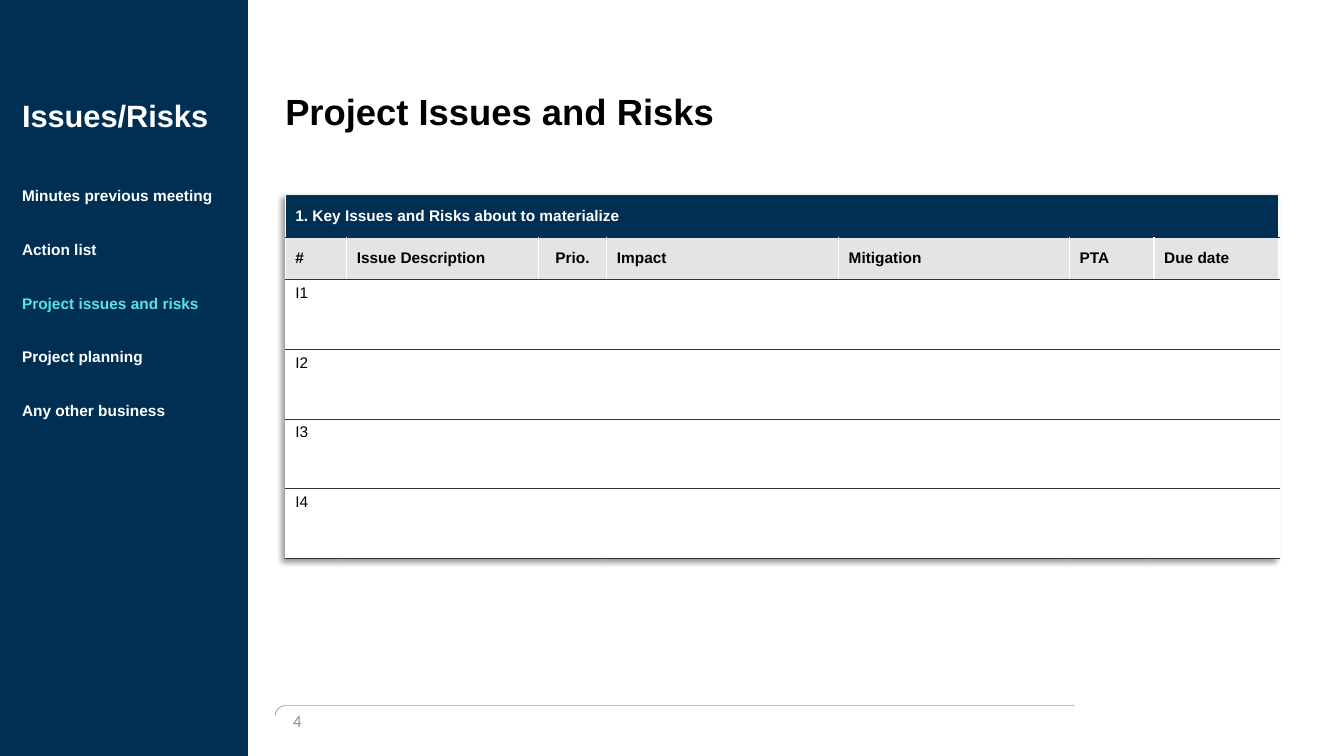
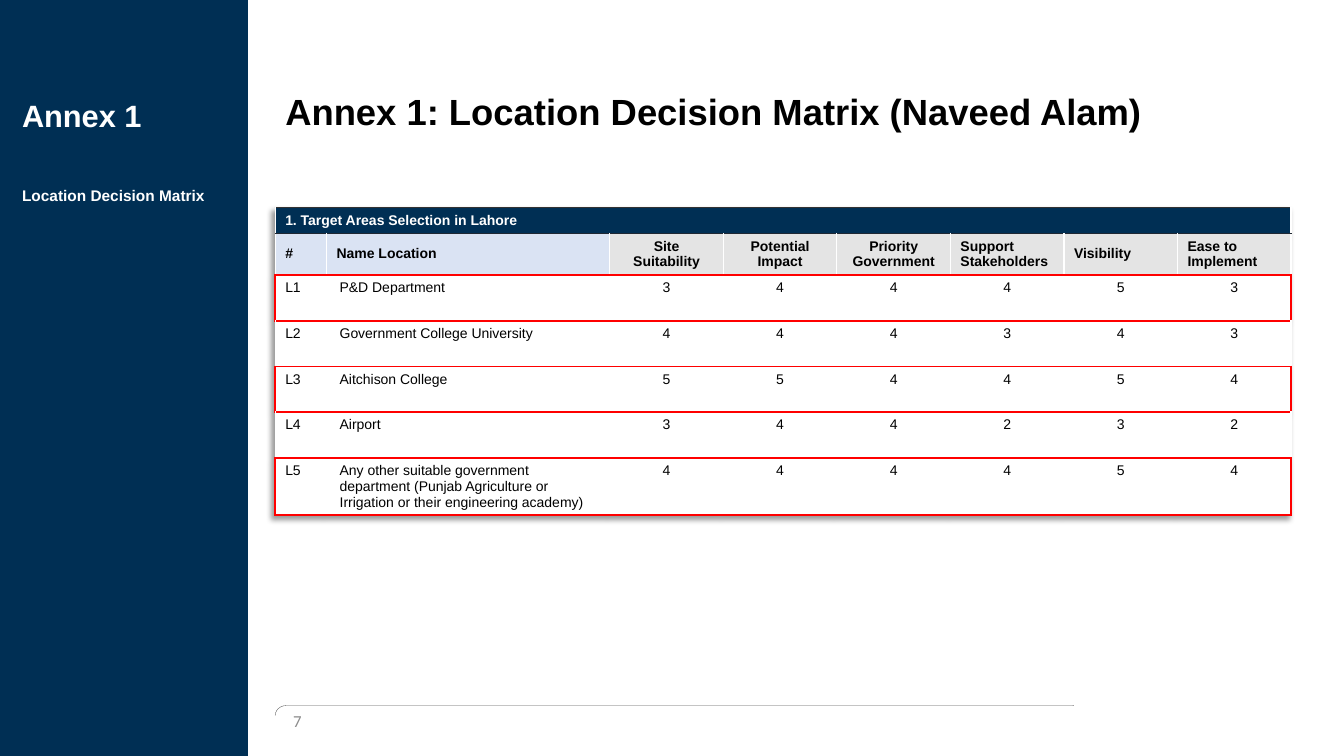
from dataclasses import dataclass
from typing import NamedTuple

import lxml.etree
import pptx
import pptx.dml.color
import pptx.enum.shapes
import pptx.enum.text
import pptx.oxml.ns
import pptx.util

ALIGN = pptx.enum.text.PP_ALIGN
ANCHOR = pptx.enum.text.MSO_ANCHOR
SHAPE = pptx.enum.shapes.MSO_SHAPE
qn = pptx.oxml.ns.qn


@dataclass(frozen=True)
class Theme:
    navy: str = "002F54"
    white: str = "FFFFFF"
    black: str = "000000"
    accent: str = "5BE0EF"
    number: str = "8C8C8C"
    footer_line: str = "595959"
    header: str = "E4E4E4"
    header_blue: str = "DAE3F3"
    dark_rule: str = "1F2833"
    rule: str = "333333"
    highlight: str = "FF0000"
    font: str = "Arial"
    number_font: str = "Calibri"
    title_size: float = 26
    section_size: float = 22
    agenda_size: float = 11
    agenda_pitch: float = 19.2
    number_size: float = 12


class Box(NamedTuple):
    """Place and size in cells of the 160 x 90 slide grid."""
    col: float
    row: float
    cols: float
    rows: float


class Rule(NamedTuple):
    color: str
    width: float


class Column(NamedTuple):
    heading: str
    cols: float
    heading_align: ALIGN = ALIGN.LEFT
    body_align: ALIGN = ALIGN.LEFT
    heading_fill: str = Theme.header
    body_inset: float = 0.1


@dataclass(frozen=True)
class Matrix:
    caption: str
    col: float
    row: float
    columns: list[Column]
    row_heights: list[float]
    body: list[list[str]]
    body_rule: Rule
    size: float
    highlighted: tuple[int, ...] = ()


@dataclass(frozen=True)
class Page:
    number: str
    title: str
    section: str
    agenda: list[str]
    matrix: Matrix
    current: str = ""


T = Theme()
CELL = pptx.util.Inches(1) / 12
SIDEBAR = Box(0, 0, 29.52, 90)
TITLE = Box(32.76, 4.8, 116.28, 17.4)
SECTION = Box(1.44, 11.4, 27, 5.88)
AGENDA = Box(1.44, 20.6, 27, 65.56)
NUMBER = Box(33.72, 83.4, 18.36, 4.8)
FOOTER_BRACKET = Box(80.28, 36.48, 1.2, 96.24)
FOOTER_MASK = Box(127.92, 83.16, 1.32, 2.4)
WHITE_RULE = Rule(T.white, 1)
DARK_RULE = Rule(T.dark_rule, 1)
THIN_RULE = Rule(T.rule, 0.5)
RED_RULE = Rule(T.highlight, 1.5)


def grid(cells: float) -> pptx.util.Emu:
    return pptx.util.Emu(round(cells * CELL))


def rgb(color: str) -> pptx.dml.color.RGBColor:
    return pptx.dml.color.RGBColor.from_string(color)


def add_run(p, text: str, size: float, color: str, bold: bool = True,
            font: str = T.font) -> None:
    r = p.add_run()
    r.text = text
    r.font.name = font
    r.font.size = pptx.util.Pt(size)
    r.font.bold = bold
    r.font.color.rgb = rgb(color)


def set_frame(tf, anchor: ANCHOR) -> None:
    tf.word_wrap = True
    tf.auto_size = pptx.enum.text.MSO_AUTO_SIZE.NONE
    tf.vertical_anchor = anchor
    tf.margin_left = tf.margin_right = pptx.util.Inches(0.1)
    tf.margin_top = tf.margin_bottom = pptx.util.Inches(0.05)


def add_text_frame(slide, box: Box, anchor: ANCHOR = ANCHOR.TOP):
    tf = slide.shapes.add_textbox(*map(grid, box)).text_frame
    set_frame(tf, anchor)
    return tf


def add_outline(slide, kind: SHAPE, box: Box, fill: str = "", line: Rule | None = None):
    sp = slide.shapes.add_shape(kind, *map(grid, box))
    sp.shadow.inherit = False
    if fill:
        sp.fill.solid()
        sp.fill.fore_color.rgb = rgb(fill)
    else:
        sp.fill.background()
    if line:
        sp.line.color.rgb = rgb(line.color)
        sp.line.width = pptx.util.Pt(line.width)
    else:
        sp.line.fill.background()
    return sp


def dress_layout(layout, slide) -> None:
    """Draw the sidebar and footer on a slide, then move them to its layout."""
    for ph in list(layout.placeholders):
        if ph.placeholder_format.idx:
            ph.element.getparent().remove(ph.element)
    bracket = add_outline(slide, SHAPE.LEFT_BRACKET, FOOTER_BRACKET,
                          line=Rule(T.footer_line, 0.25))
    bracket.rotation = 90
    bracket.adjustments[0] = 1.079
    sidebar = add_outline(slide, SHAPE.RECTANGLE, SIDEBAR, T.navy)
    mask = add_outline(slide, SHAPE.RECTANGLE, FOOTER_MASK, T.white, WHITE_RULE)
    for sp in (bracket, sidebar, mask):
        layout.shapes.element.append(sp.element)


def set_borders(cell, left: Rule, right: Rule, top: Rule, bottom: Rule) -> None:
    tc_pr = cell._tc.get_or_add_tcPr()
    for side, rule in zip("LRTB", (left, right, top, bottom)):
        ln = lxml.etree.SubElement(tc_pr, qn(f"a:ln{side}"),
                                   w=str(pptx.util.Pt(rule.width)))
        fill = lxml.etree.SubElement(ln, qn("a:solidFill"))
        lxml.etree.SubElement(fill, qn("a:srgbClr"), val=rule.color)


def add_table_shadow(frame) -> None:
    tbl_pr = frame.element.find(".//" + qn("a:tblPr"))
    effects = lxml.etree.Element(qn("a:effectLst"))
    shadow = lxml.etree.SubElement(effects, qn("a:outerShdw"), blurRad="50800",
                                   dist="38100", dir="8100000", algn="tr", rotWithShape="0")
    color = lxml.etree.SubElement(shadow, qn("a:prstClr"), val="black")
    lxml.etree.SubElement(color, qn("a:alpha"), val="40000")
    tbl_pr.insert(0, effects)


def fill_cell(cell, text: str, size: float, fill: str, color: str = T.black,
              bold: bool = True, align: ALIGN = ALIGN.LEFT,
              anchor: ANCHOR = ANCHOR.MIDDLE, inset: float = 0.1) -> None:
    cell.fill.solid()
    cell.fill.fore_color.rgb = rgb(fill)
    cell.vertical_anchor = anchor
    cell.margin_left = cell.margin_right = pptx.util.Inches(inset)
    p = cell.text_frame.paragraphs[0]
    p.alignment = align
    if text:
        add_run(p, text, size, color, bold)
    else:
        p.font.size = pptx.util.Pt(size)


def add_matrix(slide, m: Matrix) -> None:
    """Draw a caption row, a heading row and the body rows."""
    last = len(m.columns) - 1
    box = Box(m.col, m.row, sum(c.cols for c in m.columns), sum(m.row_heights))
    frame = slide.shapes.add_table(len(m.row_heights), last + 1, *map(grid, box))
    add_table_shadow(frame)
    table = frame.table
    table.first_row = table.horz_banding = False
    for row, height in zip(table.rows, m.row_heights):
        row.height = grid(height)

    for i, column in enumerate(m.columns):
        table.columns[i].width = grid(column.cols)
        set_borders(table.cell(0, i), WHITE_RULE, WHITE_RULE, THIN_RULE, DARK_RULE)
        heading = table.cell(1, i)
        set_borders(heading, WHITE_RULE, WHITE_RULE, DARK_RULE, m.body_rule)
        fill_cell(heading, column.heading, m.size, column.heading_fill,
                  align=column.heading_align)
        for j, values in enumerate(m.body):
            cell = table.cell(j + 2, i)
            marked = j in m.highlighted
            set_borders(cell, RED_RULE if marked and i == 0 else WHITE_RULE,
                        RED_RULE if marked and i == last else WHITE_RULE,
                        m.body_rule, m.body_rule)
            fill_cell(cell, values[i], m.size, T.white, bold=False,
                      align=column.body_align, anchor=ANCHOR.TOP,
                      inset=column.body_inset)
    caption = table.cell(0, 0)
    caption.merge(table.cell(0, last))
    fill_cell(caption, m.caption, m.size, T.navy, T.white)


def add_title(slide, text: str) -> None:
    title = slide.shapes.title
    title.left, title.top, title.width, title.height = map(grid, TITLE)
    set_frame(title.text_frame, ANCHOR.MIDDLE)
    p = title.text_frame.paragraphs[0]
    p.alignment = ALIGN.LEFT
    p.line_spacing = 0.9
    add_run(p, text, T.title_size, T.black)


def add_sidebar_text(slide, page: Page) -> None:
    p = add_text_frame(slide, SECTION).paragraphs[0]
    p.line_spacing = 0.9
    add_run(p, page.section, T.section_size, T.white)
    tf = add_text_frame(slide, AGENDA)
    for i, item in enumerate(page.agenda):
        p = tf.add_paragraph() if i else tf.paragraphs[0]
        p.line_spacing = pptx.util.Pt(T.agenda_pitch)
        if i:
            p.space_before = pptx.util.Pt(T.agenda_pitch)
        add_run(p, item, T.agenda_size, T.accent if item == page.current else T.white)


def add_page(slide, page: Page) -> None:
    add_title(slide, page.title)
    add_sidebar_text(slide, page)
    add_matrix(slide, page.matrix)
    p = add_text_frame(slide, NUMBER, ANCHOR.MIDDLE).paragraphs[0]
    add_run(p, page.number, T.number_size, T.number, False, T.number_font)


def score_column(heading: str, align: ALIGN = ALIGN.LEFT, inset: float = 0.13) -> Column:
    return Column(heading, 13.52, align, ALIGN.CENTER, body_inset=inset)


RISKS = Matrix(
    "1. Key Issues and Risks about to materialize", 33.96, 23.28,
    [Column("#", 7.32), Column("Issue Description", 22.8),
     Column("Prio.", 8.16, ALIGN.CENTER), Column("Impact", 27.6),
     Column("Mitigation", 27.48), Column("PTA", 10.08), Column("Due date", 14.88)],
    [5, 5] + [8.3] * 4,
    [[f"I{n}"] + [""] * 6 for n in range(1, 5)], THIN_RULE, 11)

LOCATIONS = Matrix(
    "1. Target Areas Selection in Lahore", 32.76, 24.72,
    [Column("#", 6.12, heading_fill=T.header_blue),
     Column("Name Location", 33.72, heading_fill=T.header_blue, body_inset=0.13),
     score_column("Site Suitability", ALIGN.CENTER),
     score_column("Potential Impact", ALIGN.CENTER),
     score_column("Priority Government", ALIGN.CENTER),
     score_column("Support Stakeholders"), score_column("Visibility"),
     score_column("Ease to Implement", inset=0.1)],
    [3.06, 4.84] + [5.46] * 4 + [6.7],
    [["L1", "P&D Department", *"344453"],
     ["L2", "Government College University", *"444343"],
     ["L3", "Aitchison College", *"554454"],
     ["L4", "Airport", *"344232"],
     ["L5", "Any other suitable government department (Punjab Agriculture or "
            "Irrigation or their engineering academy)", *"444454"]],
    RED_RULE, 10, highlighted=(0, 2, 4))

PAGES = [
    Page("4", "Project Issues and Risks", "Issues/Risks",
         ["Minutes previous meeting", "Action list", "Project issues and risks",
          "Project planning", "Any other business"],
         RISKS, current="Project issues and risks"),
    Page("7", "Annex 1: Location Decision Matrix (Naveed Alam)", "Annex 1",
         ["Location Decision Matrix"], LOCATIONS),
]


def main() -> None:
    prs = pptx.Presentation()
    prs.slide_width, prs.slide_height = grid(160), grid(90)
    layout = prs.slide_layouts.get_by_name("Title Only")
    slides = [prs.slides.add_slide(layout) for _ in PAGES]
    dress_layout(layout, slides[0])
    for slide, page in zip(slides, PAGES):
        add_page(slide, page)
    prs.save("out.pptx")


if __name__ == "__main__":
    main()
